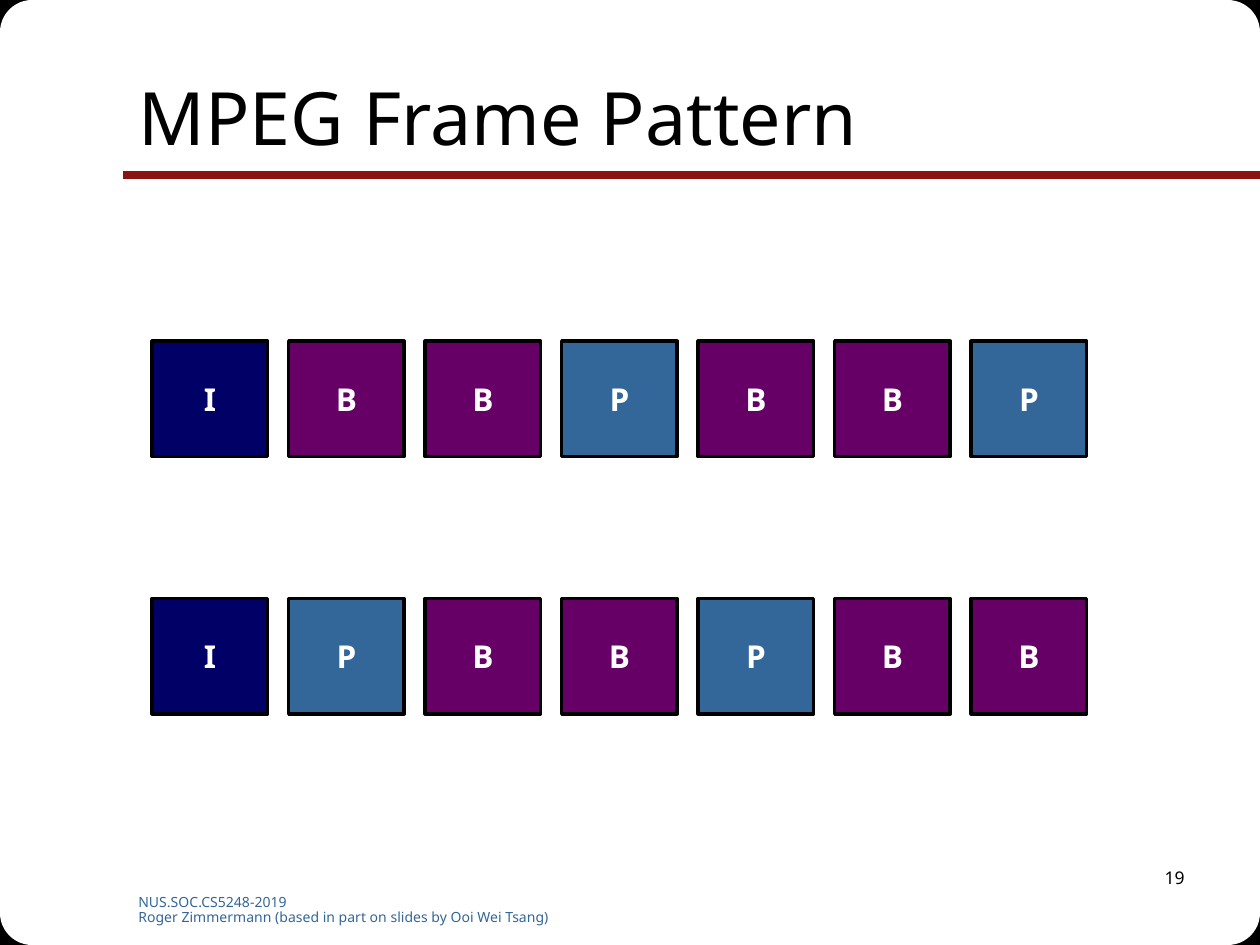
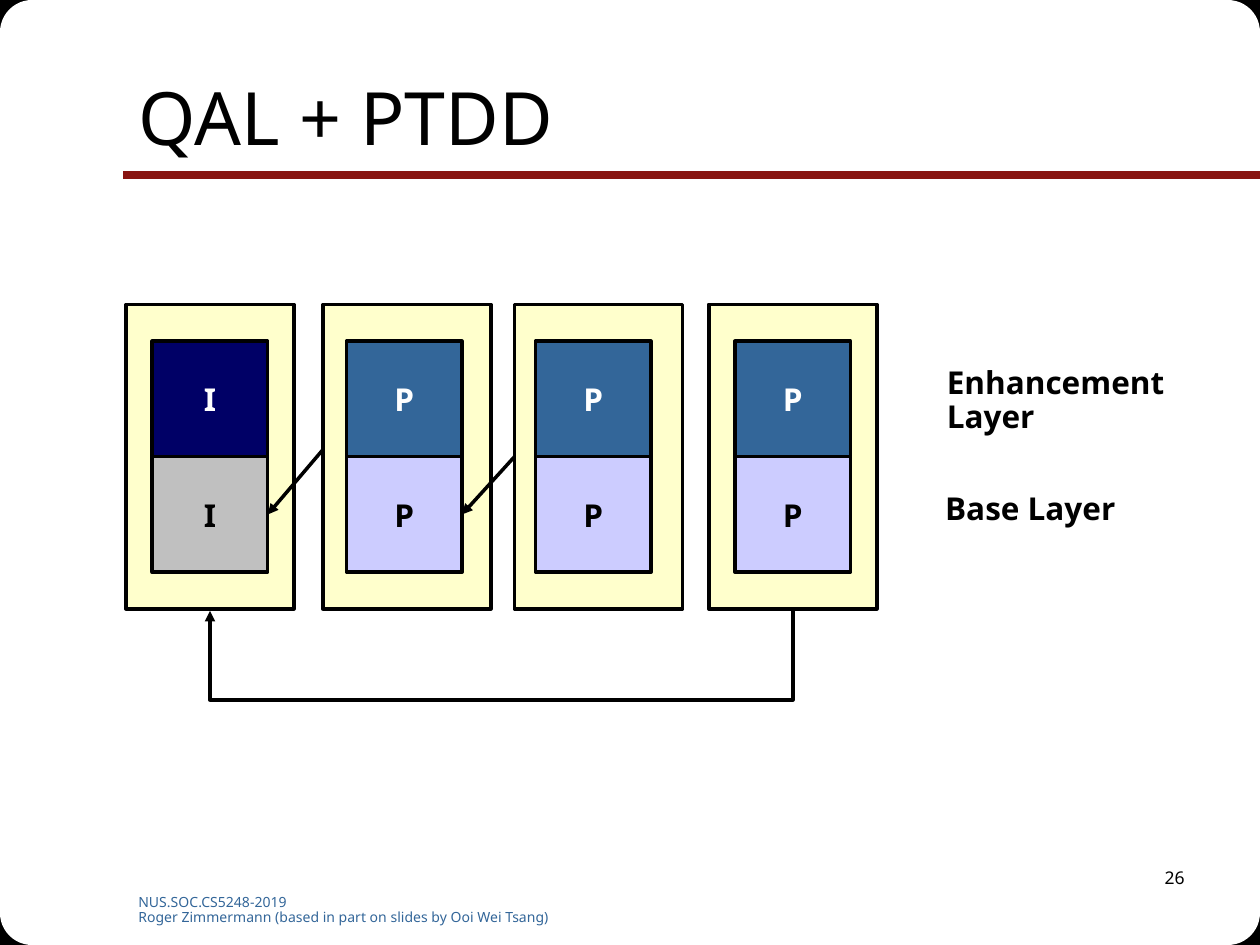
"""Build two lecture slides on MPEG frame patterns and layered frames."""
from itertools import product
from typing import NamedTuple

from lxml.etree import SubElement
from pptx import Presentation
from pptx.dml.color import RGBColor
from pptx.enum.shapes import MSO_CONNECTOR, MSO_SHAPE
from pptx.enum.text import MSO_ANCHOR, MSO_AUTO_SIZE, PP_ALIGN
from pptx.oxml.ns import qn
from pptx.util import Pt

FONT = "Noto Sans"
BLACK, WHITE, RED, BLUE, CREAM = "000000", "FFFFFF", "891411", "336699", "FFFFCC"
WIDTH, HEIGHT = 720, 540
FOOTER = ["NUS.SOC.CS5248-2019",
          "Roger Zimmermann (based in part on slides by Ooi Wei Tsang)"]

FRAME, FRAME_LEFT, FRAME_TOP, FRAME_PITCH = 66, 87, 195, 78
PANEL_TOP, PANEL_W, PANEL_H = 174, 96, 174


class Box(NamedTuple):
    left: float
    top: float
    width: float
    height: float


class FrameStyle(NamedTuple):
    fill: str
    color: str = WHITE


class Column(NamedTuple):
    kind: str
    panel_left: float
    frame_left: float


class Label(NamedTuple):
    box: Box
    lines: list[str]
    size: float
    color: str = BLACK
    bold: bool = False
    align: PP_ALIGN = PP_ALIGN.LEFT
    spacing: float = 0.9


FULL = {"I": FrameStyle("000066"), "P": FrameStyle(BLUE), "B": FrameStyle("660066")}
BASE = {"I": FrameStyle("C0C0C0", BLACK), "P": FrameStyle("CCCCFF", BLACK)}
PATTERNS = {FRAME_TOP: "IBBPBBP", 342: "IPBBPBB"}
COLUMNS = [Column("I", 72, 87), Column("P", 184.5, 198),
           Column("P", 294, 306), Column("P", 405, 420)]
LAYER_LABELS = [
    Label(Box(534, 206.5, 150, 50), ["Enhancement", "Layer"], 18, bold=True),
    Label(Box(533, 278.5, 150, 29), ["Base Layer"], 18, bold=True),
]


def rgb(color: str) -> RGBColor:
    return RGBColor.from_string(color)


def set_font(p, size: float, color: str, bold: bool = False) -> None:
    font = p.font
    font.name, font.size, font.bold = FONT, Pt(size), bold
    font.color.rgb = rgb(color)


def add_box(slide, box: Box, fill: str, line_width: float = 0, shape=MSO_SHAPE.RECTANGLE):
    sp = slide.shapes.add_shape(shape, *map(Pt, box))
    sp.shadow.inherit = False
    sp.fill.solid()
    sp.fill.fore_color.rgb = rgb(fill)
    if line_width:
        sp.line.color.rgb = rgb(BLACK)
        sp.line.width = Pt(line_width)
    else:
        sp.line.fill.background()
    return sp


def add_label(slide, label: Label) -> None:
    tf = slide.shapes.add_textbox(*map(Pt, label.box)).text_frame
    tf.word_wrap = True
    tf.text = "\n".join(label.lines)
    for p in tf.paragraphs:
        p.alignment, p.line_spacing = label.align, label.spacing
        set_font(p, label.size, label.color, label.bold)


def add_frame(slide, kind: str, left: float, top: float, style: FrameStyle):
    sp = add_box(slide, Box(left, top, FRAME, FRAME), style.fill, 2)
    tf = sp.text_frame
    tf.word_wrap = False
    tf.vertical_anchor = MSO_ANCHOR.MIDDLE
    p = tf.paragraphs[0]
    p.text, p.alignment = kind, PP_ALIGN.CENTER
    set_font(p, 18, style.color, True)
    return sp


def add_line(slide, x1: float, y1: float, x2: float, y2: float, color: str = BLACK,
             width: float = 2, arrow: bool = True, kind=MSO_CONNECTOR.STRAIGHT):
    line = slide.shapes.add_connector(kind, Pt(x1), Pt(y1), Pt(x2), Pt(y2))
    line.line.color.rgb = rgb(color)
    line.line.width = Pt(width)
    sp_pr = line._element.spPr
    if arrow:
        SubElement(sp_pr.find(qn("a:ln")), qn("a:tailEnd"), type="triangle")
    SubElement(sp_pr, qn("a:effectLst"))
    return line


def add_loop_arrow(slide, x_from: float, x_to: float, y: float, drop: float) -> None:
    """Draw an elbow arrow that leaves downwards and returns to the same height."""
    thin, span = 0.12, x_from - x_to
    mid = (x_from + x_to) / 2
    line = add_line(slide, mid - thin / 2, y - span / 2, mid + thin / 2, y + span / 2,
                    kind=MSO_CONNECTOR.ELBOW)
    sp_pr = line._element.spPr
    sp_pr.find(qn("a:xfrm")).set("rot", "5400000")
    guides = sp_pr.find(qn("a:prstGeom")).get_or_add_avLst()
    SubElement(guides, qn("a:gd"), name="adj1", fmla=f"val {round(drop / thin * 100000)}")


def add_corners(slide, width: float, height: float, fill: str, line: float, shape) -> None:
    for left, top in product((0, WIDTH - width), (0, HEIGHT - height)):
        add_box(slide, Box(left, top, width, height), fill, line, shape)


def add_slide(prs, title: str, number: int):
    slide = prs.slides.add_slide(prs.slide_layouts[5])
    add_corners(slide, 31, 31.5, BLACK, 0.75, MSO_SHAPE.RECTANGLE)
    add_corners(slide, 110, 110, WHITE, 0, MSO_SHAPE.ROUNDED_RECTANGLE)
    add_line(slide, WIDTH, 100, 70.5, 100, RED, 4.5, arrow=False)
    add_label(slide, Label(Box(72, 508, 294, 20), FOOTER, 8, BLUE))
    add_label(slide, Label(Box(534, 492, 150, 36), [str(number)], 10,
                           align=PP_ALIGN.RIGHT, spacing=1))

    sp = slide.shapes.title
    slide.shapes._spTree.append(sp._element)
    sp.left, sp.top, sp.width, sp.height = map(Pt, (72, 21.5, 612, 90))
    tf = sp.text_frame
    tf.text = title
    tf.auto_size = MSO_AUTO_SIZE.NONE
    tf.vertical_anchor = MSO_ANCHOR.MIDDLE
    p = tf.paragraphs[0]
    p.alignment = PP_ALIGN.LEFT
    set_font(p, 42, BLACK)
    return slide


def build_frame_pattern(prs) -> None:
    slide = add_slide(prs, "MPEG Frame Pattern", 19)
    for top, pattern in PATTERNS.items():
        for i, kind in enumerate(pattern):
            add_frame(slide, kind, FRAME_LEFT + i * FRAME_PITCH, top, FULL[kind])


def build_layers(prs) -> None:
    slide = add_slide(prs, "QAL + PTDD", 26)
    panels = [add_box(slide, Box(c.panel_left, PANEL_TOP, PANEL_W, PANEL_H), CREAM, 2)
              for c in COLUMNS]
    for c in COLUMNS:
        add_frame(slide, c.kind, c.frame_left, FRAME_TOP, FULL[c.kind])
    bases = [add_frame(slide, c.kind, c.frame_left, FRAME_TOP + FRAME, BASE[c.kind])
             for c in COLUMNS]
    for label in LAYER_LABELS:
        add_label(slide, label)

    to_i = add_line(slide, 184.5, 257, 153, 294)
    to_i.end_connect(bases[0], 3)
    to_p = add_line(slide, 294, 261, 264, 294)
    to_p.begin_connect(panels[2], 1)
    to_p.end_connect(bases[1], 3)
    first, last = (c.panel_left + PANEL_W / 2 for c in (COLUMNS[0], COLUMNS[-1]))
    add_loop_arrow(slide, last, first, PANEL_TOP + PANEL_H + 1, 54)


def main() -> None:
    prs = Presentation()
    prs.slide_width, prs.slide_height = Pt(WIDTH), Pt(HEIGHT)
    build_frame_pattern(prs)
    build_layers(prs)
    prs.save("out.pptx")


if __name__ == "__main__":
    main()
